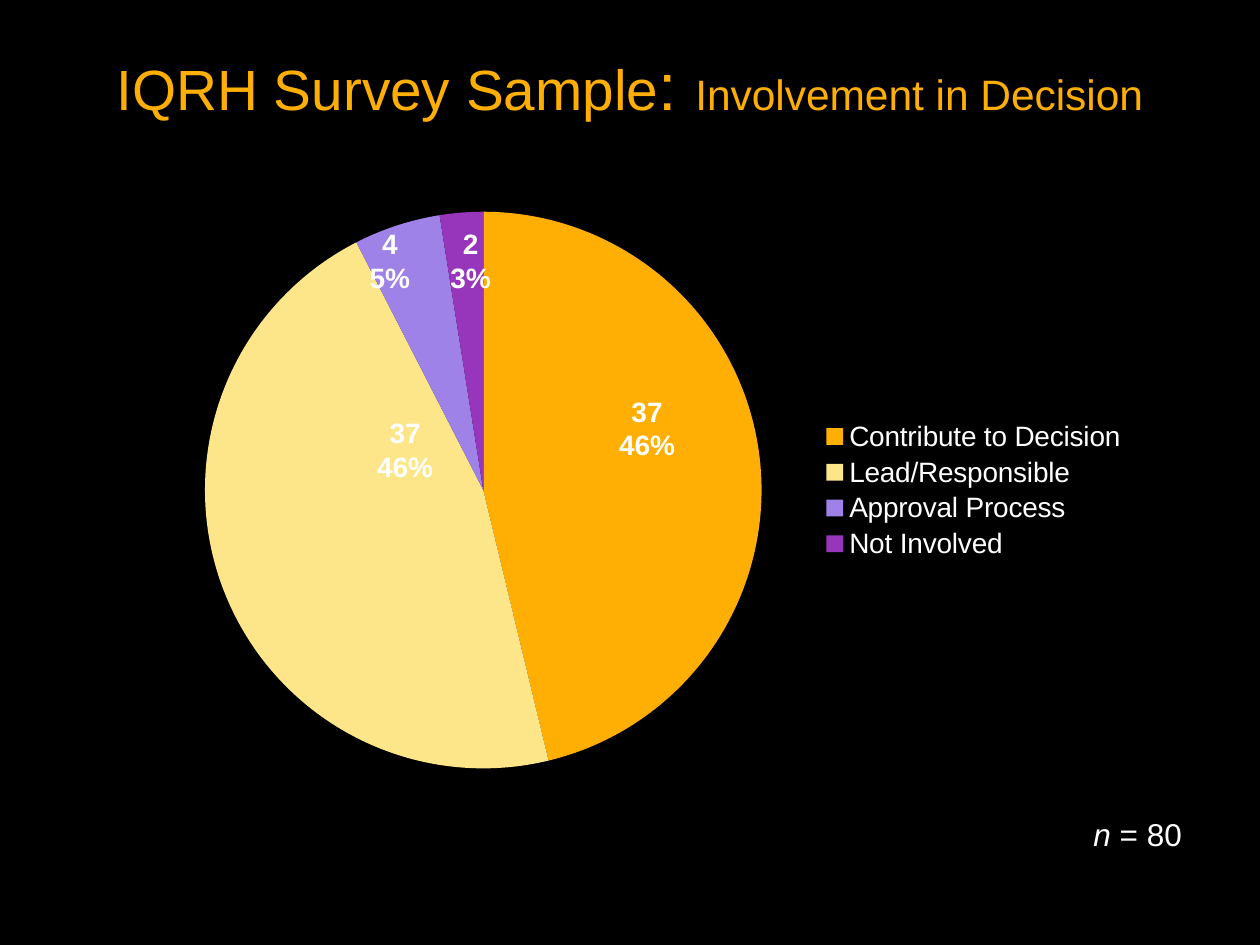
from dataclasses import dataclass

from lxml.etree import SubElement
from pptx import Presentation
from pptx.chart.data import CategoryChartData
from pptx.dml.color import RGBColor
from pptx.enum.chart import XL_CHART_TYPE as ChartType, XL_LEGEND_POSITION as LegendPos
from pptx.enum.text import MSO_ANCHOR as Anchor, MSO_AUTO_SIZE as AutoSize, PP_ALIGN as Align
from pptx.oxml.ns import qn
from pptx.util import Inches, Pt


@dataclass(frozen=True)
class Theme:
    font: str = "Arial"
    background: str = "000000"
    text: str = "FFFFFF"
    title: str = "FFAF03"
    slices: tuple = ("FFAF03", "FDE689", "9E82E7", "9735BB")
    title_size: float = 32.4
    colon_size: float = 37.8
    subtitle_size: float = 24.3
    chart_size: float = 10
    label_size: float = 16
    note_size: float = 18


THEME = Theme()
INVOLVEMENT = {
    "Contribute to Decision": 46,
    "Lead/Responsible": 46,
    "Approval Process": 5,
    "Not Involved": 2.5,
}
SLICE_LABELS = [
    (4.81, 3.08, 0.65, "37", "46%"),
    (2.89, 3.25, 0.65, "37", "46%"),
    (2.83, 1.75, 0.53, "4", "5%"),
    (3.47, 1.75, 0.53, "2", "3%"),
]
PIE_AREA = {"x": 0.05, "y": 0.03, "w": 0.57, "h": 0.94}


def style_font(font, size, color=THEME.text):
    font.name = THEME.font
    font.size = Pt(size)
    font.color.rgb = RGBColor.from_string(color)


def add_text(s, box, align, wrap=False):
    tb = s.shapes.add_textbox(*map(Inches, box))
    tf = tb.text_frame
    tf.word_wrap = wrap
    tf.auto_size = AutoSize.NONE if wrap else AutoSize.SHAPE_TO_FIT_TEXT
    tf.paragraphs[0].alignment = align
    return tf


def add_run(p, text, size, color=THEME.text, bold=False, italic=False):
    r = p.add_run()
    r.text = text
    style_font(r.font, size, color)
    r.font.bold = bold
    r.font.italic = italic


def add_title(s):
    tf = add_text(s, (0.5, 0.3, 9, 0.8), Align.CENTER, wrap=True)
    tf.vertical_anchor = Anchor.MIDDLE
    tf.margin_bottom = Inches(0.11)
    p = tf.paragraphs[0]
    add_run(p, "IQRH Survey Sample", THEME.title_size, THEME.title)
    add_run(p, ": ", THEME.colon_size, THEME.title)
    add_run(p, "Involvement in Decision", THEME.subtitle_size, THEME.title)


def set_pie_area(chart):
    plot_area = chart._chartSpace.chart.plotArea
    layout = plot_area.find(qn("c:layout"))
    if layout is None:
        layout = SubElement(plot_area, qn("c:layout"))
        plot_area.insert(0, layout)
    manual = SubElement(layout, qn("c:manualLayout"))
    settings = {"layoutTarget": "inner", "xMode": "edge", "yMode": "edge", **PIE_AREA}
    for name, value in settings.items():
        SubElement(manual, qn(f"c:{name}")).set("val", str(value))


def add_pie(s):
    data = CategoryChartData()
    data.categories = list(INVOLVEMENT)
    data.add_series("Series 1", list(INVOLVEMENT.values()))
    box = map(Inches, (1.21, 1.54, 7.84, 4.7))
    chart = s.shapes.add_chart(ChartType.PIE, *box, data).chart
    chart.has_title = False
    style_font(chart.font, THEME.chart_size)
    chart.has_legend = True
    chart.legend.position = LegendPos.RIGHT
    chart.legend.include_in_layout = False
    style_font(chart.legend.font, THEME.label_size)
    plot = chart.plots[0]
    plot.vary_by_categories = True
    for i, color in enumerate(THEME.slices):
        fmt = plot.series[0].points[i].format
        fmt.fill.solid()
        fmt.fill.fore_color.rgb = RGBColor.from_string(color)
        fmt.line.fill.background()
    set_pie_area(chart)


def add_slice_label(s, left, top, width, count, share):
    tf = add_text(s, (left, top, width, 0.64), Align.CENTER)
    add_run(tf.paragraphs[0], count, THEME.label_size, bold=True)
    p = tf.add_paragraph()
    p.alignment = Align.CENTER
    add_run(p, share, THEME.label_size, bold=True)


def add_sample_size(s):
    p = add_text(s, (8.58, 6.42, 0.91, 0.4), Align.LEFT).paragraphs[0]
    add_run(p, "n", THEME.note_size, italic=True)
    add_run(p, " = 80", THEME.note_size)


def main():
    prs = Presentation()
    prs.slide_width, prs.slide_height = Inches(10), Inches(7.5)
    s = prs.slides.add_slide(prs.slide_layouts[6])
    s.background.fill.solid()
    s.background.fill.fore_color.rgb = RGBColor.from_string(THEME.background)
    add_pie(s)
    for label in SLICE_LABELS:
        add_slice_label(s, *label)
    add_sample_size(s)
    add_title(s)
    prs.save("out.pptx")


if __name__ == "__main__":
    main()
